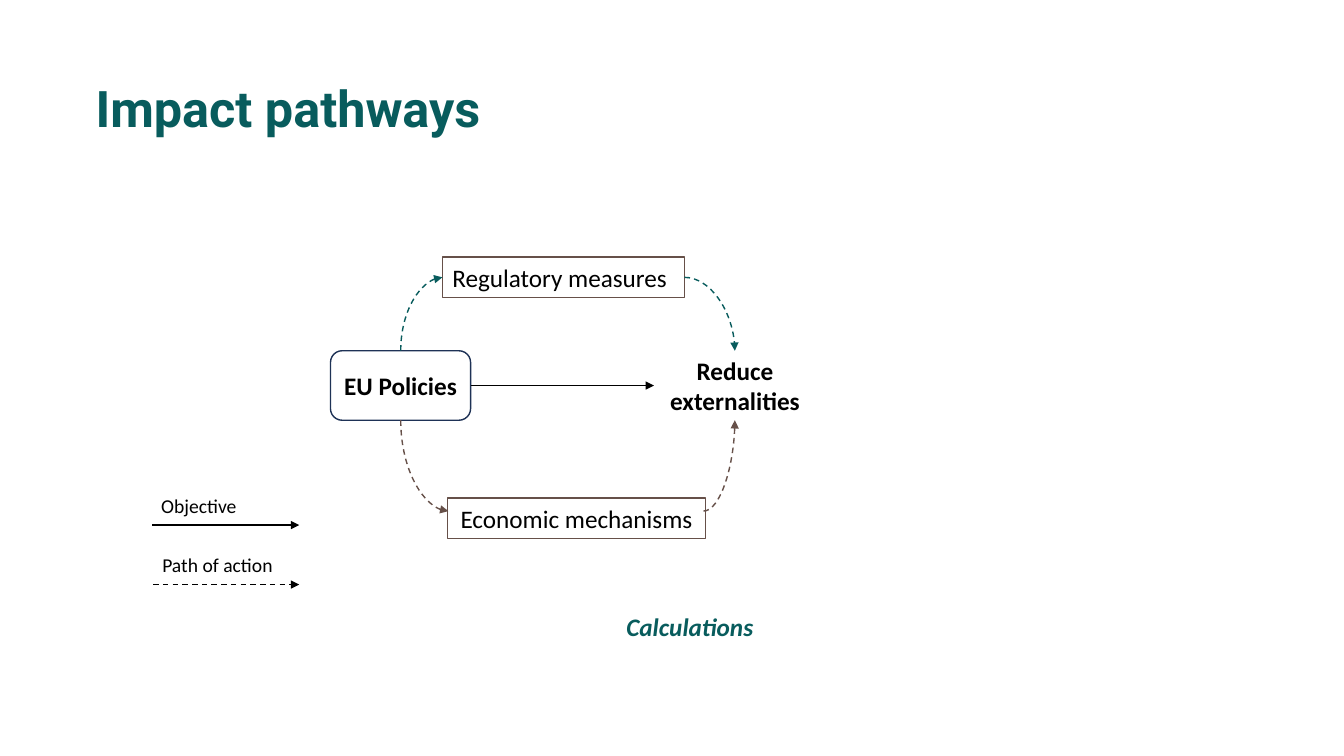
from lxml.etree import SubElement
from pptx import Presentation
from pptx.dml.color import RGBColor
from pptx.enum.dml import MSO_LINE
from pptx.enum.shapes import MSO_CONNECTOR, MSO_SHAPE
from pptx.enum.text import MSO_ANCHOR, PP_ALIGN
from pptx.oxml.ns import qn
from pptx.util import Cm, Pt

TEAL, BROWN, NAVY, BLACK = "085C5D", "665049", "1E3256", "000000"

# text, (left, top, width, height) in cm, format
LABELS = [
    ("Impact pathways", (2.16, 1.83, 29.39, 3.4),
     dict(size=36, font="Roboto", color=TEAL, bold=True, wrap=True)),
    ("Objective", (3.81, 12.32, 2.44, 0.86), dict(size=14)),
    ("Path of action", (3.84, 13.82, 3.33, 0.86), dict(size=14)),
    ("Calculations", (15.52, 15.27, 3.73, 1.02),
     dict(color=TEAL, bold=True, italic=True, align=PP_ALIGN.CENTER)),
]

# text, place, preset, outline, format
POLICY = ("EU Policies", (8.33, 8.84, 3.53, 1.75), MSO_SHAPE.ROUNDED_RECTANGLE,
          NAVY, dict(bold=True, align=PP_ALIGN.CENTER))
GOAL = ("Reduce externalities", (16.48, 8.84, 4.09, 1.75),
        MSO_SHAPE.ROUNDED_RECTANGLE, None,
        dict(bold=True, align=PP_ALIGN.CENTER, wrap=True))
ECONOMY = ("Economic mechanisms", (11.28, 12.55, 6.5, 1.02),
           MSO_SHAPE.RECTANGLE, BROWN, dict(align=PP_ALIGN.CENTER))
RULES = ("Regulatory measures", (11.15, 6.48, 6.1, 1.02),
         MSO_SHAPE.RECTANGLE, BROWN, dict(wrap=True))

# start, end, dashed
KEYS = [((3.84, 13.23), (7.54, 13.23), False),
        ((3.86, 14.73), (7.54, 14.73), True)]

# start, end, colour, leaves its start upright
CURVES = [
    ((10.1, 10.59), (11.3, 12.88), BROWN, True),
    ((10.1, 8.84), (11.15, 6.99), TEAL, True),
    ((17.25, 6.99), (18.52, 8.84), TEAL, False),
    ((17.73, 12.88), (18.52, 10.59), BROWN, False),
]


def paint(color):
    return RGBColor.from_string(color)


def write(shape, text, size=18, font="Calibri", color=BLACK, bold=False,
          italic=False, align=PP_ALIGN.LEFT, wrap=False, anchor=MSO_ANCHOR.TOP):
    frame = shape.text_frame
    frame.word_wrap = wrap
    frame.vertical_anchor = anchor
    para = frame.paragraphs[0]
    para.alignment = align
    run = para.add_run()
    run.text = text
    face = run.font
    face.name, face.size = font, Pt(size)
    face.bold, face.italic = bold, italic
    face.color.rgb = paint(color)


def add_box(slide, text, place, preset, outline, style):
    box = slide.shapes.add_shape(preset, *map(Cm, place))
    box.shadow.inherit = False
    box.fill.background()
    if outline:
        box.line.color.rgb = paint(outline)
        box.line.width = Pt(1)
    else:
        box.line.fill.background()
    write(box, text, anchor=MSO_ANCHOR.MIDDLE, **style)
    return box


def add_arrow(slide, start, end, color=BLACK, dashed=False,
              kind=MSO_CONNECTOR.STRAIGHT):
    arrow = slide.shapes.add_connector(kind, *map(Cm, start + end))
    arrow.line.color.rgb = paint(color)
    arrow.line.width = Pt(1)
    if dashed:
        arrow.line.dash_style = MSO_LINE.DASH
    props = arrow._element.spPr
    SubElement(props.find(qn("a:ln")), qn("a:tailEnd"), type="triangle")
    SubElement(props, qn("a:effectLst"))
    return arrow


def add_curve(slide, start, end, color, upright):
    """Draw a quarter bend; an upright one is laid out flat, then turned 90°."""
    if upright:
        (x1, y1), (x2, y2) = start, end
        mid_x, mid_y = (x1 + x2) / 2, (y1 + y2) / 2
        half_x, half_y = (y2 - y1) / 2, (x1 - x2) / 2
        start = (mid_x - half_x, mid_y - half_y)
        end = (mid_x + half_x, mid_y + half_y)
    curve = add_arrow(slide, start, end, color, True, MSO_CONNECTOR.CURVE)
    props = curve._element.spPr
    props.find(qn("a:prstGeom")).set("prst", "curvedConnector2")
    if upright:
        props.find(qn("a:xfrm")).set("rot", str(90 * 60000))


def main():
    deck = Presentation()
    deck.slide_width, deck.slide_height = Cm(33.87), Cm(19.05)
    slide = deck.slides.add_slide(deck.slide_layouts[6])

    for text, place, style in LABELS:
        write(slide.shapes.add_textbox(*map(Cm, place)), text, **style)

    policy, goal, *_ = [add_box(slide, *item)
                        for item in (POLICY, GOAL, ECONOMY, RULES)]
    aim = add_arrow(slide, (11.86, 9.72), (16.48, 9.72))
    aim.begin_connect(policy, 3)
    aim.end_connect(goal, 1)

    for start, end, dashed in KEYS:
        add_arrow(slide, start, end, dashed=dashed)
    for item in CURVES:
        add_curve(slide, *item)
    deck.save("out.pptx")


if __name__ == "__main__":
    main()
